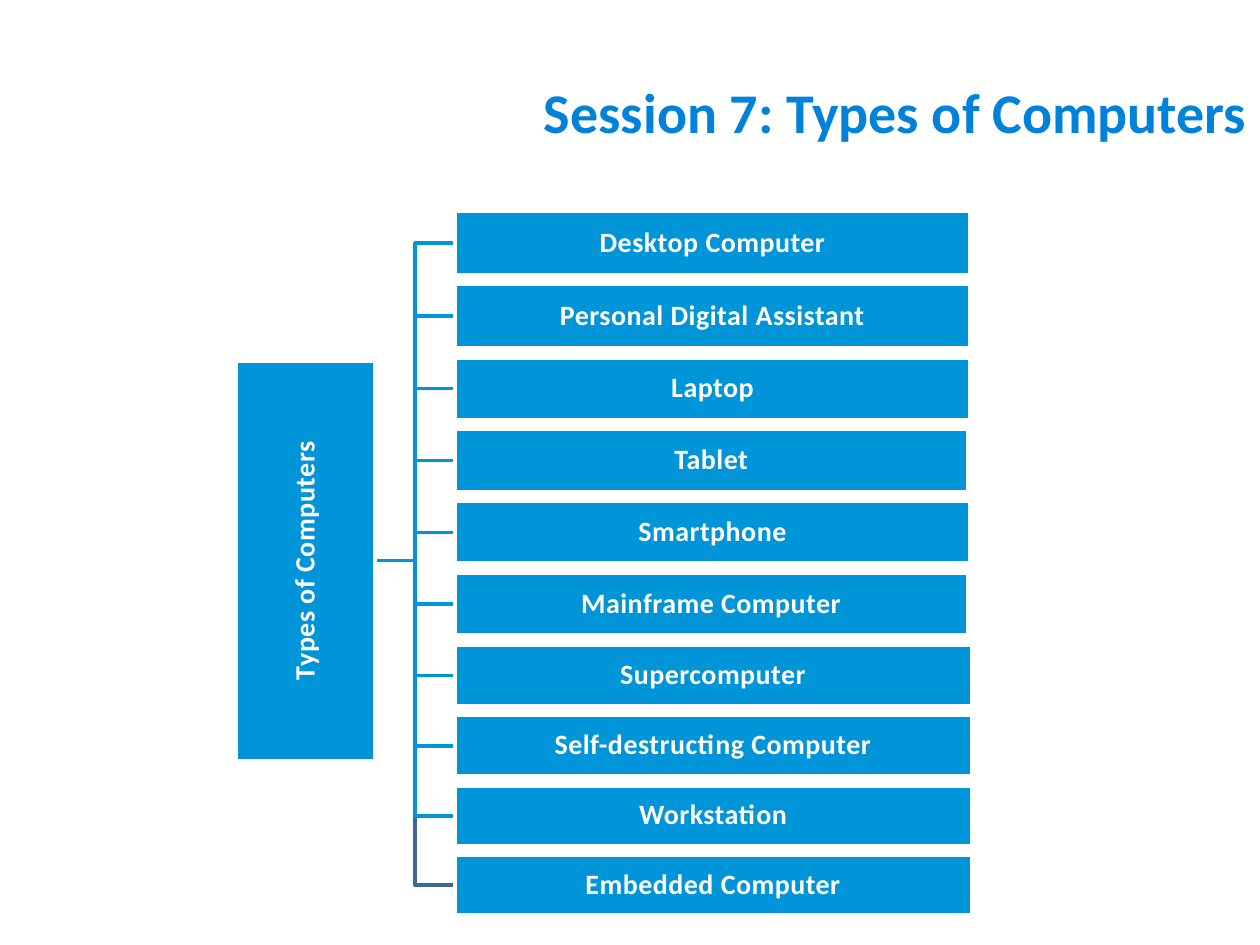
"""Build the slide that shows the types of computers as a tree."""
from dataclasses import dataclass

from pptx import Presentation
from pptx.dml.color import RGBColor as Rgb
from pptx.enum.shapes import MSO_SHAPE as Shape
from pptx.enum.text import MSO_ANCHOR as Anchor, PP_ALIGN as Align
from pptx.util import Inches, Pt


@dataclass(frozen=True)
class Theme:
    """Hold the colours, type sizes and font."""
    title: str = "0082DA"
    box: str = "0094D8"
    last: str = "3F6797"
    white: str = "FFFFFF"
    font: str = "Calibri"
    head: int = 32
    body: int = 16
    line: int = 2


def write(frame, text, theme, size, color, align=Align.CENTER, pad=None,
          lead=None, track=None):
    """Put one formatted line of text in a frame."""
    frame.word_wrap = True
    frame.vertical_anchor = Anchor.MIDDLE
    if pad is not None:
        frame.margin_left = frame.margin_right = Inches(pad)
        frame.margin_top = frame.margin_bottom = Inches(pad)
    para = frame.paragraphs[0]
    para.alignment = align
    if lead:
        para.line_spacing = lead
    run = para.add_run()
    run.text = text
    font = run.font
    font.name, font.size, font.bold = theme.font, Pt(size), True
    font.color.rgb = Rgb.from_string(color)
    if track:
        run._r.get_or_add_rPr().set("spc", str(track))


class Page:
    """Draw styled elements on one slide."""

    def __init__(self, slide, theme):
        """Keep the slide and its style."""
        self.slide, self.theme = slide, theme

    def title(self, text, left, top, width, height):
        """Place and fill the title."""
        box = self.slide.shapes.title
        box.left, box.top = Inches(left), Inches(top)
        box.width, box.height = Inches(width), Inches(height)
        write(box.text_frame, text, self.theme, self.theme.head,
              self.theme.title, align=Align.RIGHT)

    def box(self, text, left, top, width, height, turn=0):
        """Draw a labelled rectangle."""
        box = self.slide.shapes.add_shape(
            Shape.RECTANGLE, Inches(left), Inches(top), Inches(width), Inches(height))
        box.rotation = turn
        box.shadow.inherit = False
        box.fill.solid()
        box.fill.fore_color.rgb = Rgb.from_string(self.theme.box)
        box.line.color.rgb = Rgb.from_string(self.theme.white)
        box.line.width = Pt(self.theme.line)
        write(box.text_frame, text, self.theme, self.theme.body,
              self.theme.white, pad=0.01, lead=0.9, track=30)

    def branch(self, start, end, color):
        """Draw a bent line between two points."""
        (left, top), (right, low) = start, end
        mid = (left + right) / 2
        spots = [(mid, top), (mid, low), (right, low)]
        pen = self.slide.shapes.build_freeform(Inches(left), Inches(top))
        pen.add_line_segments([(Inches(x), Inches(y)) for x, y in spots], close=False)
        bend = pen.convert_to_shape()
        bend.shadow.inherit = False
        bend.fill.background()
        bend.line.color.rgb = Rgb.from_string(color)
        bend.line.width = Pt(self.theme.line)


ROWS = [
    ("Desktop Computer", 4.09, 0.5),
    ("Personal Digital Assistant", 4.09, 0.5),
    ("Laptop", 4.09, 0.49),
    ("Tablet", 4.07, 0.49),
    ("Smartphone", 4.09, 0.49),
    ("Mainframe Computer", 4.07, 0.49),
    ("Supercomputer", 4.1, 0.48),
    ("Self-destructing Computer", 4.1, 0.48),
    ("Workstation", 4.1, 0.47),
    ("Embedded Computer", 4.1, 0.47),
]


def main():
    """Build and save the slide."""
    deck = Presentation()
    deck.slide_width, deck.slide_height = Inches(10), Inches(7.5)
    theme = Theme()
    page = Page(deck.slides.add_slide(deck.slide_layouts[5]), theme)
    page.title("Session 7: Types of Computers", 0, 0.52, 10, 0.73)

    left, top, gap = 3.61, 1.68, 0.08
    root = (2.98, 4.45)
    tops = []
    for _, _, height in ROWS:
        tops.append(top)
        top += height + gap

    rows = list(zip(ROWS, tops))
    for (text, _, height), top in reversed(rows):
        color = theme.last if text == ROWS[-1][0] else theme.box
        page.branch(root, (left, top + height / 2), color)
    page.box("Types of Computers", 0.84, 3.9, 3.17, 1.1, turn=270)
    for (text, width, height), top in rows:
        page.box(text, left, top, width, height)
    deck.save("out.pptx")


if __name__ == "__main__":
    main()
